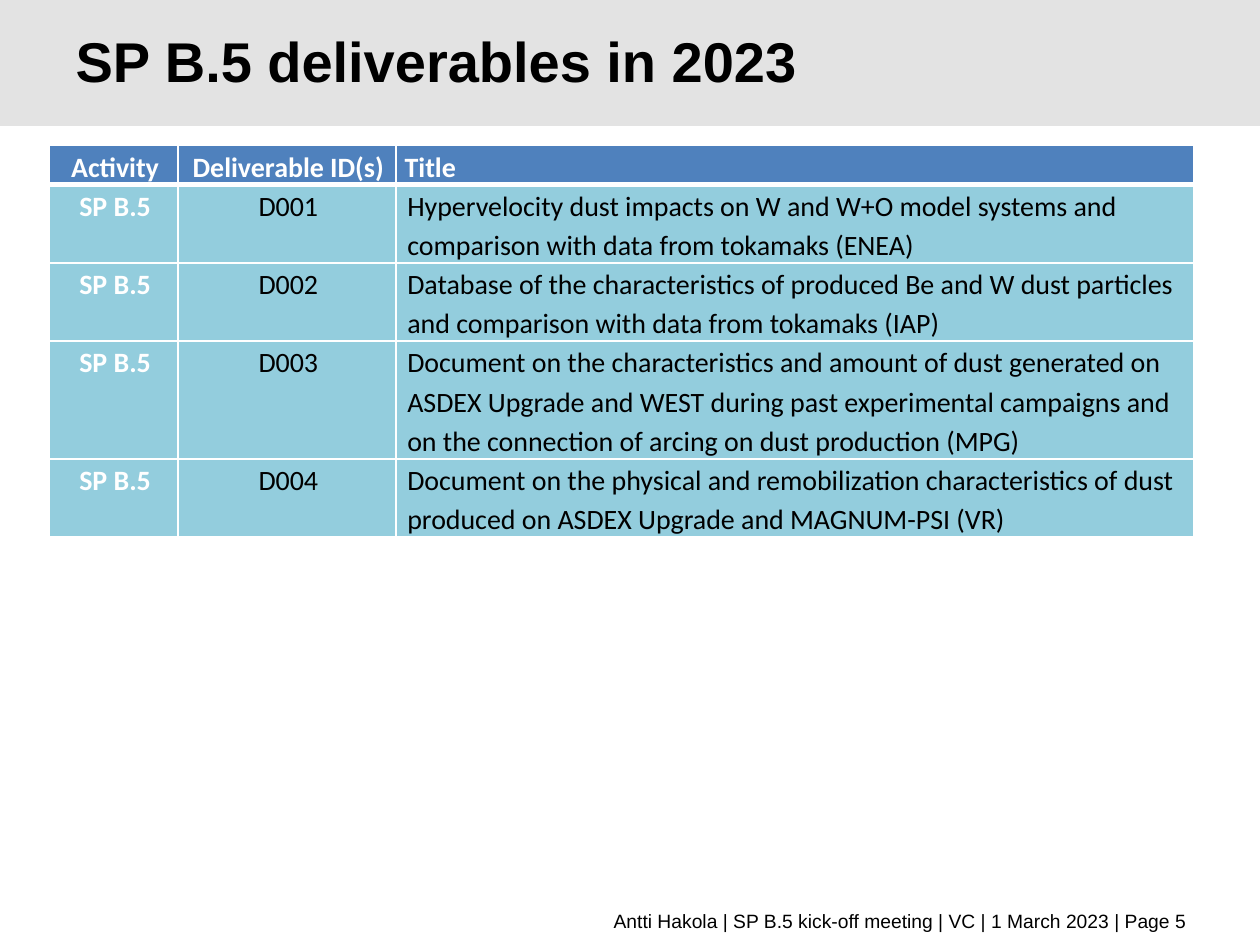
from dataclasses import dataclass

from lxml.etree import SubElement
from pptx import Presentation
from pptx.dml.color import RGBColor
from pptx.enum.shapes import MSO_SHAPE
from pptx.enum.text import MSO_ANCHOR, PP_ALIGN
from pptx.oxml.ns import qn
from pptx.util import Pt


@dataclass(frozen=True)
class Theme:
    """Colours, fonts and type sizes of the slide."""
    black: str = "000000"
    white: str = "FFFFFF"
    band: str = "E3E3E3"
    header: str = "4F81BD"
    body: str = "93CDDD"
    heading_font: str = "Arial"
    table_font: str = "Calibri"
    title_size: float = 32
    table_size: float = 16
    footer_size: float = 11


THEME = Theme()
HEADERS = ("Activity", "Deliverable ID(s)", "Title")
DELIVERABLES = (
    ("D001", "Hypervelocity dust impacts on W and W+O model systems and "
             "comparison with data from tokamaks (ENEA)", 2),
    ("D002", "Database of the characteristics of produced Be and W dust particles "
             "and comparison with data from tokamaks (IAP)", 2),
    ("D003", "Document on the characteristics and amount of dust generated on "
             "ASDEX Upgrade and WEST during past experimental campaigns and "
             "on the connection of arcing on dust production (MPG)", 3),
    ("D004", "Document on the physical and remobilization characteristics of dust "
             "produced on ASDEX Upgrade and MAGNUM-PSI (VR)", 2),
)
COL_WIDTHS = (73.5, 124.5, 456)
LINE_HEIGHT = 22.4


def set_attrs(obj, **values):
    """Set every named value on an object."""
    for name, value in values.items():
        setattr(obj, name, value)


def write(tf, text, font, size, color=THEME.black, bold=False, **para):
    """Write one formatted paragraph and return it."""
    p = tf.paragraphs[0]
    set_attrs(p, **para)
    r = p.add_run()
    r.text = text
    set_attrs(r.font, name=font, size=Pt(size), bold=bold)
    r.font.color.rgb = RGBColor.from_string(color)
    return p


def add_band(s):
    """Add the grey band behind the title."""
    sp = s.shapes.add_shape(MSO_SHAPE.RECTANGLE, 0, 0, Pt(720), Pt(72))
    sp.shadow.inherit = False
    sp.fill.solid()
    sp.fill.fore_color.rgb = RGBColor.from_string(THEME.band)
    sp.line.fill.background()
    sp._element.getparent().insert(2, sp._element)


def add_title(s, text):
    """Place and fill the title placeholder."""
    sp = s.shapes.title
    set_attrs(sp, left=Pt(36), top=Pt(3.6), width=Pt(594), height=Pt(68.4))
    sp.text_frame.vertical_anchor = MSO_ANCHOR.MIDDLE
    write(sp.text_frame, text, THEME.heading_font, THEME.title_size, bold=True,
          alignment=PP_ALIGN.LEFT, line_spacing=Pt(32))


def add_footer(s, text):
    """Add the right-aligned footer line."""
    tf = s.shapes.add_textbox(Pt(36.7), Pt(515.5), Pt(648.7), Pt(20.9)).text_frame
    set_attrs(tf, word_wrap=True, vertical_anchor=MSO_ANCHOR.MIDDLE)
    write(tf, text, THEME.heading_font, THEME.footer_size, alignment=PP_ALIGN.RIGHT)


def set_borders(cell, **widths):
    """Draw white cell borders of the given widths in points."""
    tc_pr = cell._tc.get_or_add_tcPr()
    for side, width in widths.items():
        ln = SubElement(tc_pr, qn(f"a:ln{side}"), w=str(Pt(width)))
        SubElement(SubElement(ln, qn("a:solidFill")), qn("a:srgbClr"), val=THEME.white)


def fill_cell(cell, text, is_header, col):
    """Format one table cell by its row kind and column."""
    is_title = col == len(HEADERS) - 1
    light = is_header or col == 0
    set_attrs(cell, margin_left=Pt(5), margin_right=Pt(5), margin_top=0,
              margin_bottom=0, vertical_anchor=MSO_ANCHOR.TOP)
    set_borders(cell, L=1, R=1, T=1, B=3 if is_header else 1)
    cell.fill.solid()
    cell.fill.fore_color.rgb = RGBColor.from_string(
        THEME.header if is_header else THEME.body)
    p = write(cell.text_frame, text, THEME.table_font, THEME.table_size,
              THEME.white if light else THEME.black, light,
              alignment=PP_ALIGN.LEFT if is_title else PP_ALIGN.CENTER,
              line_spacing=1.15, space_after=Pt(3))
    if not (is_header and is_title):
        p._p.get_or_add_pPr().set("marL", str(Pt(1.5)))


def add_deliverables(s):
    """Add the deliverables table, with row heights set by line counts."""
    rows = [HEADERS] + [("SP B.5", code, text) for code, text, _ in DELIVERABLES]
    lines = [1] + [count for _, _, count in DELIVERABLES]
    table = s.shapes.add_table(len(rows), len(HEADERS), Pt(28.3), Pt(83),
                               Pt(sum(COL_WIDTHS)), Pt(LINE_HEIGHT * sum(lines))).table
    table.horz_banding = False
    for column, width in zip(table.columns, COL_WIDTHS):
        column.width = Pt(width)
    for i, (row, count) in enumerate(zip(rows, lines)):
        table.rows[i].height = Pt(LINE_HEIGHT * count)
        for j, text in enumerate(row):
            fill_cell(table.cell(i, j), text, i == 0, j)


def main():
    """Build and save the slide."""
    prs = Presentation()
    set_attrs(prs, slide_width=Pt(720), slide_height=Pt(540))
    s = prs.slides.add_slide(prs.slide_layouts[5])
    add_band(s)
    add_footer(s, "Antti Hakola | SP B.5 kick-off meeting | VC | 1 March 2023 | Page 5")
    add_title(s, "SP B.5 deliverables in 2023")
    add_deliverables(s)
    prs.save("out.pptx")


if __name__ == "__main__":
    main()
